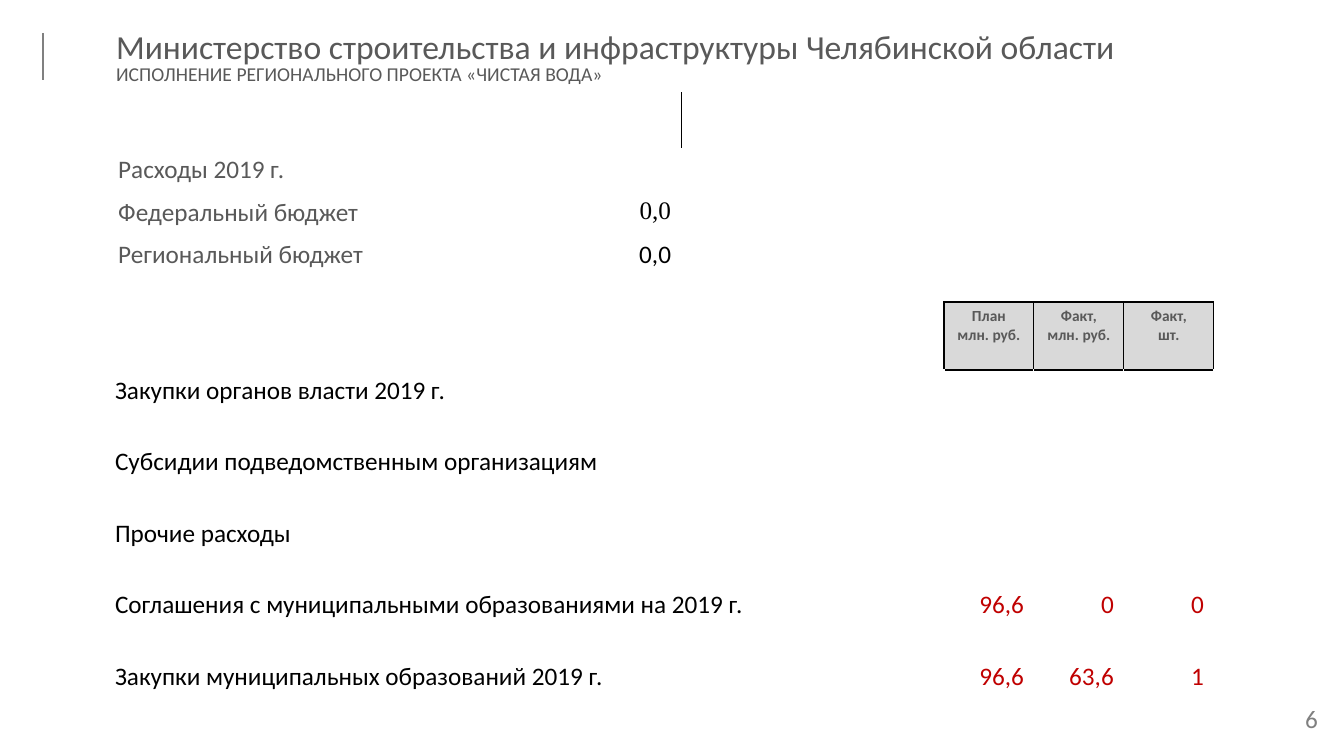
from lxml.etree import SubElement
from pptx import Presentation
from pptx.dml.color import RGBColor
from pptx.enum.shapes import MSO_CONNECTOR
from pptx.enum.text import MSO_ANCHOR, MSO_AUTO_SIZE, PP_ALIGN
from pptx.oxml.ns import qn
from pptx.util import Emu, Pt

BLACK = RGBColor(0x00, 0x00, 0x00)
DARK_GREY = RGBColor(0x59, 0x59, 0x59)
GREY = RGBColor(0x80, 0x80, 0x80)
LIGHT_GREY = RGBColor(0xD9, 0xD9, 0xD9)
RED = RGBColor(0xC0, 0x00, 0x00)

EMU_PER_PX = 914400 / 100.8


def px(length):
    return Emu(round(length * EMU_PER_PX))


class SlideBuilder:
    """Holds the slide and its text style; lengths are in px."""

    font = "Calibri"

    def __init__(self, slide):
        self.slide = slide

    def set_lines(self, frame, lines, sizes, color, align=PP_ALIGN.LEFT,
                  font=None, bold=False, spacing=None):
        for i, (line, size) in enumerate(zip(lines, sizes)):
            paragraph = frame.paragraphs[0] if i == 0 else frame.add_paragraph()
            paragraph.text = line
            paragraph.alignment = align
            if spacing:
                paragraph.line_spacing = spacing
            style = paragraph.font
            style.name, style.size = font or self.font, Pt(size)
            style.bold, style.color.rgb = bold, color

    def place(self, shape, left, top, width, height):
        shape.left, shape.top = px(left), px(top)
        shape.width, shape.height = px(width), px(height)
        frame = shape.text_frame
        frame.word_wrap = True
        frame.auto_size = MSO_AUTO_SIZE.NONE
        frame.vertical_anchor = MSO_ANCHOR.MIDDLE
        return frame

    def title(self, box, lines, sizes, color):
        frame = self.place(self.slide.shapes.title, *box)
        self.set_lines(frame, lines, sizes, color, spacing=0.8)

    def text(self, box, line, size, color):
        frame = self.place(self.slide.shapes.add_textbox(0, 0, 0, 0), *box)
        self.set_lines(frame, [line], [size], color, PP_ALIGN.CENTER, spacing=0.8)

    def line(self, x1, y1, x2, y2, color, width):
        rule = self.slide.shapes.add_connector(
            MSO_CONNECTOR.STRAIGHT, px(x1), px(y1), px(x2), px(y2))
        rule.line.color.rgb = color
        rule.line.width = Pt(width)
        SubElement(rule._element.spPr, qn("a:effectLst"))

    def table(self, left, top, columns, rows):
        frame = self.slide.shapes.add_table(
            len(rows), len(columns), px(left), px(top),
            px(sum(columns)), px(sum(rows)))
        table = frame.table
        table.first_row = table.horz_banding = False
        for column, width in zip(table.columns, columns):
            column.width = px(width)
        for row, height in zip(table.rows, rows):
            row.height = px(height)
        for cell in table.iter_cells():
            cell.fill.background()
        return table

    def border(self, cell, sides):
        properties = cell._tc.get_or_add_tcPr()
        for position, side in enumerate(sides):
            edge = SubElement(properties, qn(f"a:ln{side}"), w=str(Pt(1)))
            paint = SubElement(edge, qn("a:solidFill"))
            SubElement(paint, qn("a:srgbClr"), val=str(BLACK))
            properties.insert(position, edge)

    def cell(self, cell, lines, color, size=18, **style):
        self.set_lines(cell.text_frame, lines, [size] * len(lines), color, **style)


def main():
    deck = Presentation()
    deck.slide_width, deck.slide_height = px(1344), px(756)
    builder = SlideBuilder(deck.slides.add_slide(deck.slide_layouts[5]))

    # Heading and page number
    builder.line(43, 33, 43, 80, GREY, 1.5)
    builder.text((1253, 696, 117, 50), "6", 18, GREY)
    builder.title(
        (106, 26, 1303, 67),
        ["Министерство строительства и инфраструктуры Челябинской области",
         "ИСПОЛНЕНИЕ РЕГИОНАЛЬНОГО ПРОЕКТА «ЧИСТАЯ ВОДА»"],
        [24, 14], DARK_GREY)

    # Procurement table: column heads
    procurement = builder.table(73, 302, [32, 839, 90, 90, 90],
                                [68, 71, 72, 71, 72, 72])
    builder.border(procurement.cell(0, 1), "R")
    heads = [["План", "млн. руб."], ["Факт,", "млн. руб."], ["Факт,", "шт."]]
    for column, head in enumerate(heads, start=2):
        cell = procurement.cell(0, column)
        builder.border(cell, "LRTB")
        cell.fill.solid()
        cell.fill.fore_color.rgb = LIGHT_GREY
        builder.cell(cell, head, DARK_GREY, 11, align=PP_ALIGN.CENTER, bold=True)
        builder.border(procurement.cell(1, column), "T")

    # Procurement table: spending lines
    spending = [
        ("Закупки органов власти 2019 г.", []),
        ("Субсидии подведомственным организациям", []),
        ("Прочие расходы", []),
        ("Соглашения с муниципальными образованиями на 2019 г.",
         ["96,6", "0", "0"]),
        ("Закупки муниципальных образований 2019 г.", ["96,6", "63,6", "1"]),
    ]
    for row, (label, values) in enumerate(spending, start=1):
        builder.cell(procurement.cell(row, 1), [label], BLACK)
        for column, value in enumerate(values, start=2):
            builder.cell(procurement.cell(row, column), [value], RED,
                         align=PP_ALIGN.RIGHT)

    # Budget table
    budget = builder.table(84, 93, [23, 345, 228], [56, 43, 43, 74])
    builder.border(budget.cell(0, 2), "R")
    sources = [
        ("Расходы 2019 г.", None, None),
        ("Федеральный бюджет", "0,0", "Times New Roman"),
        ("Региональный бюджет", "0,0", "Calibri"),
    ]
    for row, (label, amount, font) in enumerate(sources, start=1):
        builder.cell(budget.cell(row, 1), [label], DARK_GREY)
        if amount:
            builder.cell(budget.cell(row, 2), [amount], BLACK,
                         align=PP_ALIGN.RIGHT, font=font)

    deck.save("out.pptx")


if __name__ == "__main__":
    main()
